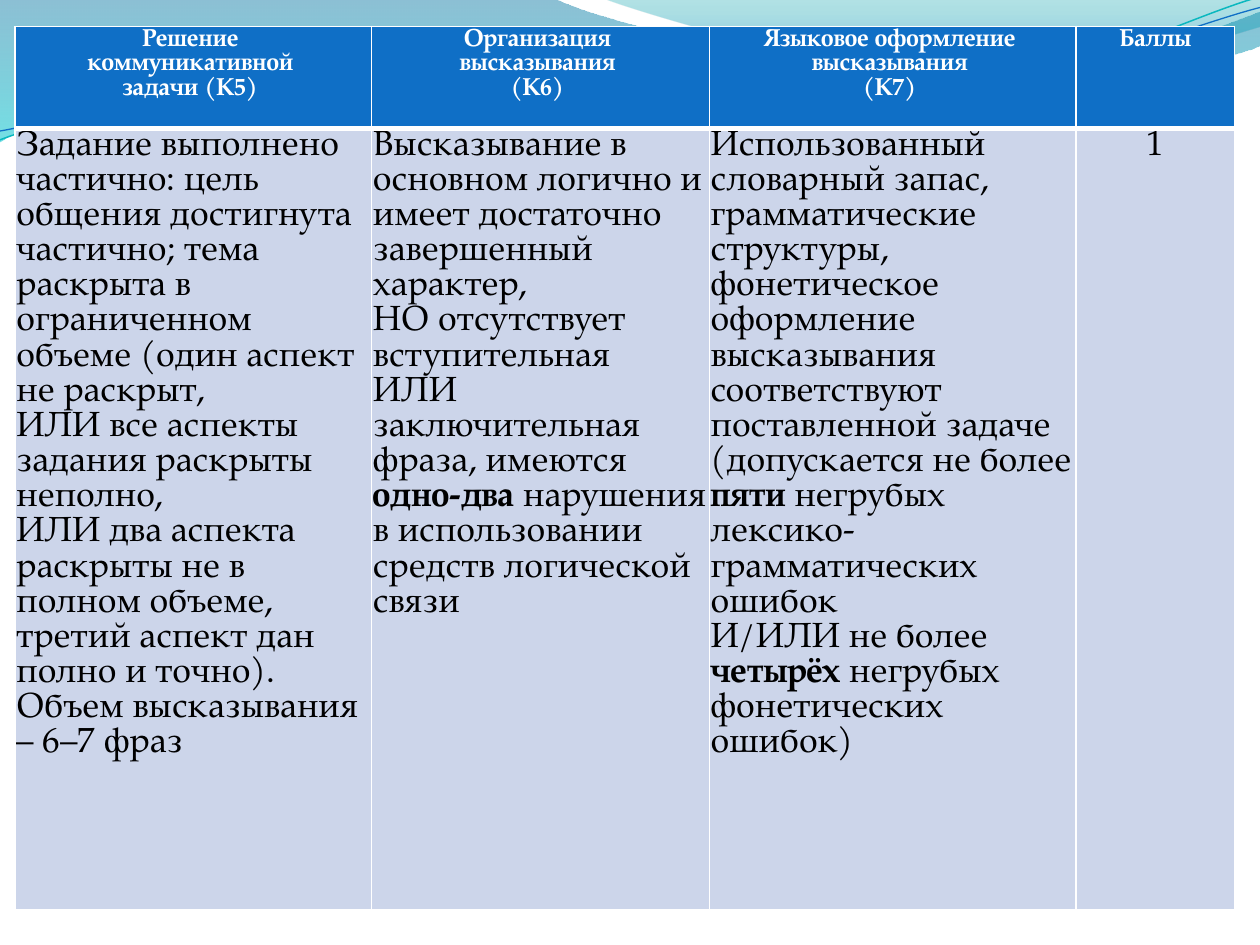
"""Build the slide with the scoring table for a spoken statement."""
import math
from pptx import Presentation, util as u
from pptx.dml import color
from pptx.enum import text as t
from pptx.oxml import ns, xmlchemy as xc

HEAD = [
    "Решение \nкоммуникативной \nзадачи (К5) ",
    "Организация \nвысказывания \n(К6) ",
    "Языковое оформление \nвысказывания \n(К7) ",
    "Баллы",
]
BODY = [
    ["Задание выполнено частично: цель общения достигнута частично; тема раскрыта "
     "в ограниченном объеме (один аспект не раскрыт,",
     "ИЛИ все аспекты задания раскрыты неполно,",
     "ИЛИ два аспекта раскрыты не в полном объеме, третий аспект дан полно и точно). "
     "Объем высказывания – 6–7 фраз"],
    ["Высказывание в основном логично и имеет достаточно завершенный характер, \n"
     "НО отсутствует вступительная",
     "ИЛИ",
     "заключительная",
     "фраза, имеются **одно-два** нарушения в использовании средств логической связи"],
    ["Использованный словарный запас, грамматические структуры, фонетическое оформление "
     "высказывания соответствуют поставленной задаче (допускается не более **пяти** "
     "негрубых лексико-грамматических ошибок",
     "И/ИЛИ не более **четырёх** негрубых фонетических ошибок)"],
    ["1"],
]
COLS = [2.83, 2.68, 2.91, 1.26]
ROWS = [0.81, 6.2]

BAND = [
    [(0, 0)], [(4.4, -0.01)],
    [(4.76, 0.17), (6.64, 0.63), (7.58, 0.63)],
    [(8.53, 0.63), (9.58, 0.26), (10, 0.09)],
    [(10.01, 0.36)],
    [(9.83, 0.44), (8.7, 0.76), (7.46, 0.75)],
    [(6.22, 0.75), (3.82, 0.28), (2.57, 0.34)],
    [(1.29, 0.36), (0.46, 0.83), (-0.01, 1.13)],
    [(0, 0)],
]
CREST = [
    [(4.79, -0.01)],
    [(5.09, 0.11), (6.82, 0.62), (7.69, 0.65)],
    [(8.56, 0.69), (9.61, 0.32), (10, 0.21)],
    [(10, 0)], [(4.79, -0.01)],
]
UPPER = [
    [(0, 1.11)],
    [(0.48, 0.93), (1.58, 0.57), (2.77, 0.52)],
    [(3.95, 0.47), (5.93, 0.89), (7.13, 0.8)],
    [(8.33, 0.71), (9.38, 0.15), (9.98, -0.02)],
]
LOWER = [
    [(0, 1.04)],
    [(0.47, 0.96), (1.64, 0.61), (2.83, 0.56)],
    [(4.03, 0.51), (5.97, 0.84), (7.17, 0.75)],
    [(8.36, 0.67), (9.41, 0.21), (10, 0.06)],
]


def rgb(code):
    return color.RGBColor.from_string(code)


def turn(steps, mid, deg):
    """Turn steps clockwise around a middle point."""
    cos, sin = math.cos(math.radians(deg)), math.sin(math.radians(deg))
    return [[(mid[0] + (x - mid[0]) * cos - (y - mid[1]) * sin,
              mid[1] + (x - mid[0]) * sin + (y - mid[1]) * cos) for x, y in step]
            for step in steps]


def write(para, words, size=20, font="TeX Gyre Pagella", ink="000000", bold=False,
          align=t.PP_ALIGN.LEFT):
    """Fill a paragraph; double stars switch the weight."""
    para.alignment = align
    para.line_spacing = u.Pt(size + 0.1)
    for i, part in enumerate(words.split("**")):
        for j, line in enumerate(part.split("\n")):
            if j:
                para.add_line_break()
            run = para.add_run()
            run.text = line
            run.font.size, run.font.name = u.Pt(size), font
            run.font.bold = bold or i % 2 == 1
            run.font.color.rgb = rgb(ink)


class Deck:
    """Hold the style and the current slide."""

    blue, pale, white = "0F6FC6", "CCD5EA", "FFFFFF"

    def __init__(self):
        self.prs = Presentation()
        self.prs.slide_width, self.prs.slide_height = u.Inches(10), u.Inches(7.5)
        self.slide = self.prs.slides.add_slide(self.prs.slide_layouts[6])

    def outline(self, steps, close):
        """Draw an outline of corners and Bezier steps."""
        pts = [(u.Inches(x), u.Inches(y)) for step in steps for x, y in step]
        form = self.slide.shapes.build_freeform(*pts[0], scale=1.0)
        form.add_line_segments(pts[1:], close=close)
        shape = form.convert_to_shape()
        shape.shadow.inherit = False
        lines = iter(list(shape._element.iter(ns.qn("a:lnTo"))))
        for step in steps[1:]:
            parts = [next(lines) for _ in step]
            if len(step) == 3:
                bend = xc.OxmlElement("a:cubicBezTo")
                parts[0].addprevious(bend)
                for part in parts:
                    bend.append(part[0])
                    part.getparent().remove(part)
        return shape

    def wave(self, steps, stops):
        """Draw a wave with a see-through gradient from top to bottom."""
        shape = self.outline(steps, True)
        shape.line.fill.background()
        shape.fill.gradient()
        shape.fill.gradient_angle = 270
        for stop, (pos, code, alpha) in zip(shape.fill.gradient_stops, stops):
            stop.position = pos
            stop.color.rgb = rgb(code)
            mark = xc.OxmlElement("a:alpha")
            mark.set("val", str(alpha * 1000))
            stop._gs.find(ns.qn("a:srgbClr")).append(mark)

    def curve(self, steps, mid, code, width, tilt=2.7):
        """Draw a tilted thin curve."""
        shape = self.outline(turn(steps, mid, tilt), False)
        shape.rotation = 360 - tilt
        shape.fill.background()
        shape.line.color.rgb = rgb(code)
        shape.line.width = u.Pt(width)

    def edge(self, cell, side, width):
        """Draw one border of a cell."""
        line = xc.OxmlElement(f"a:ln{side}")
        line.set("w", str(u.Pt(width)))
        fill, tint = xc.OxmlElement("a:solidFill"), xc.OxmlElement("a:srgbClr")
        tint.set("val", self.white)
        fill.append(tint)
        line.append(fill)
        cell._tc.get_or_add_tcPr().append(line)

    def cell(self, cell, paras, fill, edges, **style):
        """Set borders, fill, margins and text of a cell."""
        for side, width in zip("LRTB", edges):
            self.edge(cell, side, width)
        cell.fill.solid()
        cell.fill.fore_color.rgb = rgb(fill)
        cell.margin_left = cell.margin_right = cell.margin_top = u.Inches(0.01)
        cell.margin_bottom = 0
        cell.vertical_anchor = t.MSO_ANCHOR.TOP
        frame = cell.text_frame
        for i, words in enumerate(paras):
            write(frame.add_paragraph() if i else frame.paragraphs[0], words, **style)

    def table(self, left, top):
        """Add the table with its head and body rows."""
        grid = self.slide.shapes.add_table(
            len(ROWS), len(COLS), u.Inches(left), u.Inches(top),
            u.Inches(sum(COLS)), u.Inches(sum(ROWS))).table
        for row, high in zip(grid.rows, ROWS):
            row.height = u.Inches(high)
        mid = t.PP_ALIGN.CENTER
        for i, (wide, head, body) in enumerate(zip(COLS, HEAD, BODY)):
            grid.columns[i].width = u.Inches(wide)
            self.cell(grid.cell(0, i), [head], self.blue, (1, 1, 1, 3),
                      size=14, ink=self.white, bold=True, align=mid)
            self.cell(grid.cell(1, i), body, self.pale, (1, 1, 1, 1),
                      align=mid if i == 3 else t.PP_ALIGN.LEFT)


def main():
    deck = Deck()
    deck.wave(BAND, [(0, "0074A1", 45), (1, "00C6CF", 55)])
    deck.wave(CREST, [(0, "00A1A9", 30), (0.8, "008BBF", 45)])
    deck.curve(UPPER, (4.99, 0.58), "0AB8BF", 0.85)
    deck.curve(LOWER, (5, 0.59), deck.blue, 0.75)
    deck.table(0.12, 0.21)
    deck.prs.save("out.pptx")


if __name__ == "__main__":
    main()
